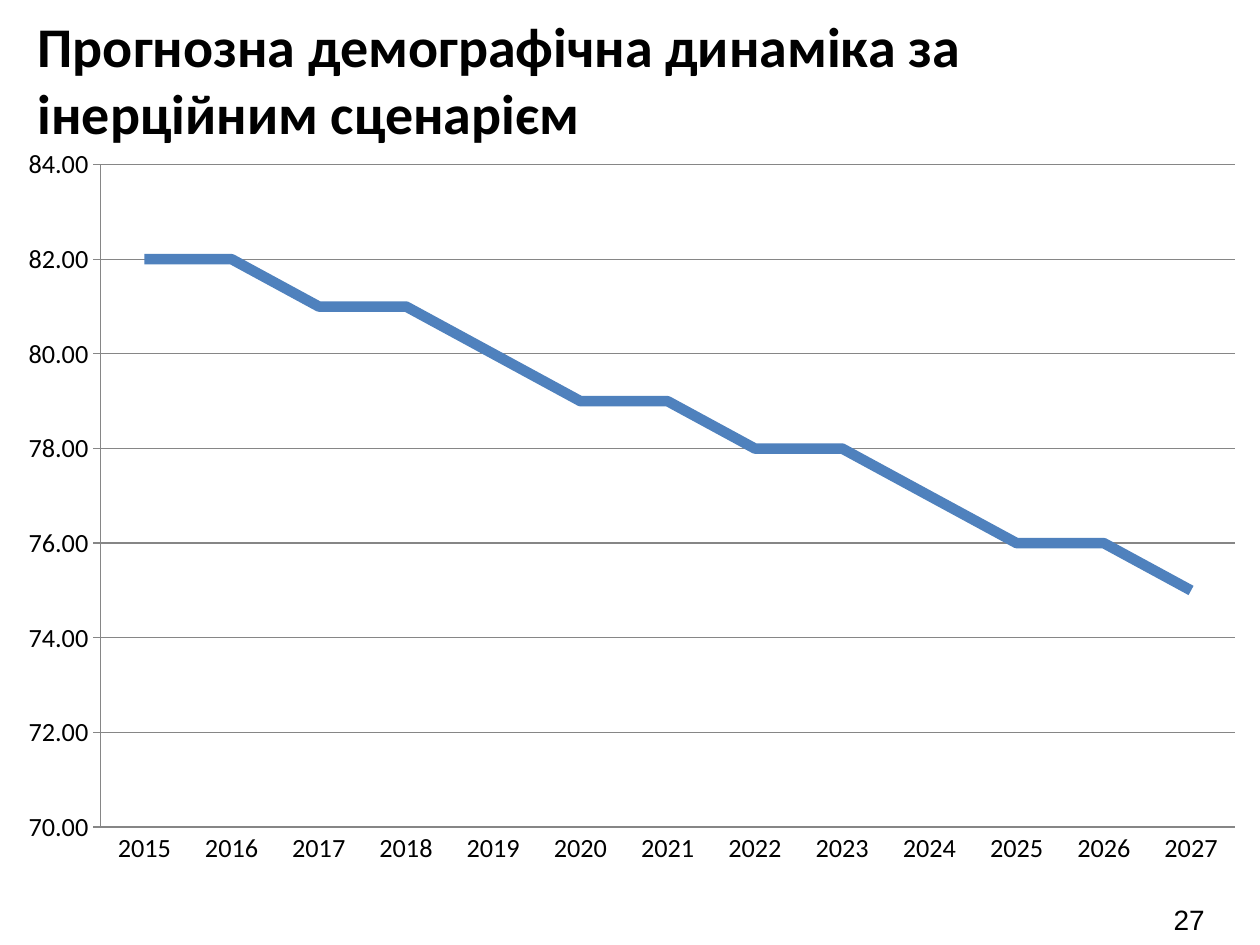
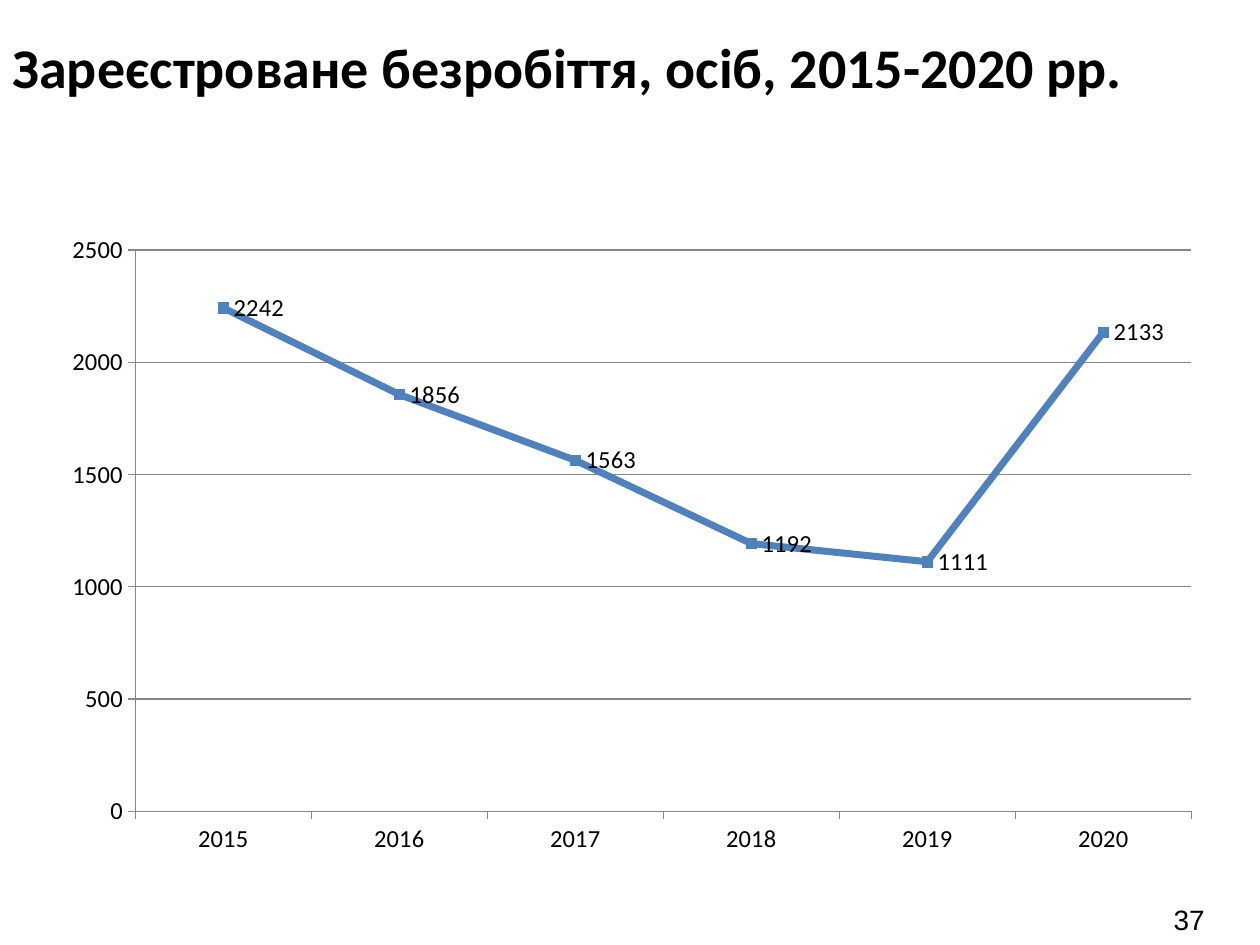
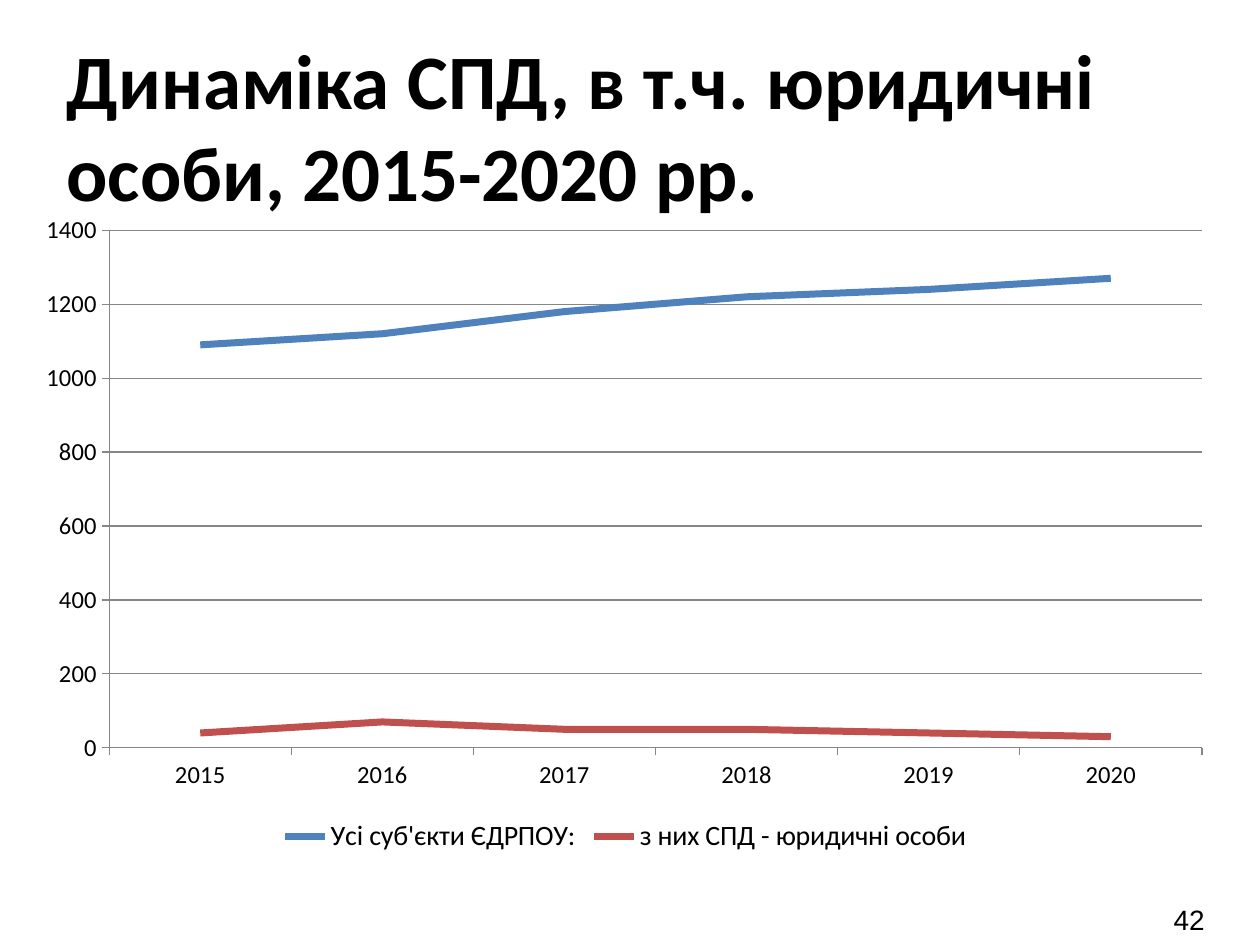
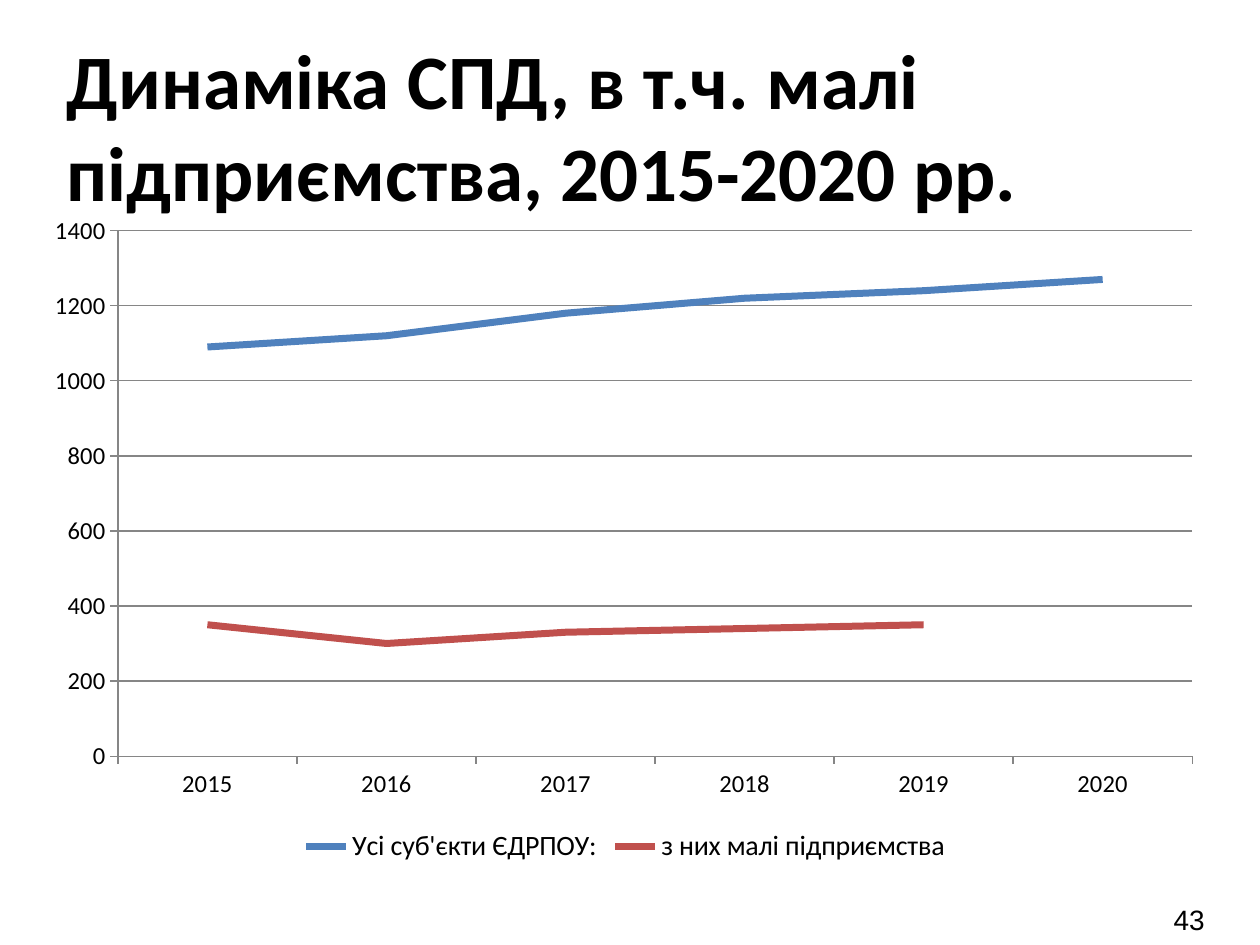
import pptx
import pptx.chart.data
import pptx.dml.color
import pptx.enum.chart
import pptx.enum.text
import pptx.oxml
import pptx.util

COLUMNS, ROWS = 100, 75
CELL = pptx.util.Inches(0.1)
COLORS = {
    "background": "FFFFFF",
    "text": "000000",
    "grid": "868686",
    "primary": "4F81BD",
    "secondary": "C0504D",
}
HEADING_FONT, NUMBER_FONT = "Calibri", "Arial"
NUMBER_BOX = (73.3, 71, 23.3, 4)
PLOT_LEFT, PLOT_TOP, PLOT_WIDTH = 0.07, 0.04, 0.91
YEARS = [str(year) for year in range(2015, 2021)]
FORECAST_YEARS = [str(year) for year in range(2015, 2028)]
ALL_ENTITIES = ("Усі суб'єкти ЄДРПОУ:", (1090, 1120, 1180, 1220, 1240, 1270))


def color(name):
    return pptx.dml.color.RGBColor.from_string(COLORS[name])


def place(box):
    return [round(cells * CELL) for cells in box]


def style_font(font, size, name=HEADING_FONT, bold=False):
    font.size = pptx.util.Pt(size)
    font.name = name
    font.bold = bold
    font.color.rgb = color("text")


def add_text(slide, box, text, size, name=HEADING_FONT, bold=False):
    frame = slide.shapes.add_textbox(*place(box)).text_frame
    frame.word_wrap = True
    paragraph = frame.paragraphs[0]
    paragraph.text = text
    style_font(paragraph.font, size, name, bold)
    return frame


def add_title(slide, box, text, size):
    frame = add_text(slide, box, text, size, bold=True)
    frame.auto_size = pptx.enum.text.MSO_AUTO_SIZE.SHAPE_TO_FIT_TEXT


def add_slide_number(slide, number):
    frame = add_text(slide, NUMBER_BOX, str(number), 16, NUMBER_FONT)
    frame.vertical_anchor = pptx.enum.text.MSO_ANCHOR.MIDDLE
    frame.paragraphs[0].alignment = pptx.enum.text.PP_ALIGN.RIGHT


def add_slide(presentation, number, title, title_box, title_size):
    slide = presentation.slides.add_slide(presentation.slide_layouts[6])
    slide.background.fill.solid()
    slide.background.fill.fore_color.rgb = color("background")
    add_slide_number(slide, number)
    add_title(slide, title_box, title, title_size)
    return slide


def style_line(line, name, width):
    line.color.rgb = color(name)
    line.width = pptx.util.Pt(width)


def set_plot_area(chart, left, width, height):
    plot_area = chart.plots[0]._element.getparent()
    for layout in plot_area.findall(pptx.oxml.ns.qn("c:layout")):
        plot_area.remove(layout)
    shares = {"x": left, "y": PLOT_TOP, "w": width, "h": height}
    modes = "".join(f'<c:{side}Mode val="edge"/>' for side in "xy")
    values = "".join(f'<c:{side} val="{share}"/>' for side, share in shares.items())
    plot_area.insert(0, pptx.oxml.parse_xml(
        f'<c:layout {pptx.oxml.ns.nsdecls("c")}><c:manualLayout>'
        f'<c:layoutTarget val="inner"/>{modes}{values}'
        "</c:manualLayout></c:layout>"))


def style_axes(chart, size, scale, number_format, category_ticks):
    tick = pptx.enum.chart.XL_TICK_MARK
    value_axis, category_axis = chart.value_axis, chart.category_axis
    value_axis.minimum_scale, value_axis.maximum_scale, value_axis.major_unit = scale
    value_axis.has_major_gridlines = True
    style_line(value_axis.major_gridlines.format.line, "grid", 0.75)
    value_axis.tick_labels.number_format = number_format
    value_axis.tick_labels.number_format_is_linked = False
    value_axis.major_tick_mark = tick.OUTSIDE
    category_axis.major_tick_mark = tick.OUTSIDE if category_ticks else tick.NONE
    for axis in (value_axis, category_axis):
        axis.minor_tick_mark = tick.NONE
        style_line(axis.format.line, "grid", 0.75)
        style_font(axis.tick_labels.font, size)


def add_markers(series, name):
    marker = series.marker
    marker.style = pptx.enum.chart.XL_MARKER_STYLE.SQUARE
    marker.size = 6
    marker.format.fill.solid()
    marker.format.fill.fore_color.rgb = color(name)
    style_line(marker.format.line, name, 0.75)


def add_value_labels(series, size):
    labels = series.data_labels
    labels.show_value = True
    labels.position = pptx.enum.chart.XL_LABEL_POSITION.RIGHT
    style_font(labels.font, size)


def add_legend(chart):
    chart.has_legend = True
    chart.legend.position = pptx.enum.chart.XL_LEGEND_POSITION.BOTTOM
    chart.legend.include_in_layout = False
    style_font(chart.legend.font, 16)


def add_line_chart(slide, box, categories, rows, scale, plot_height, size=14,
                   line_width=4, number_format="General", category_ticks=True,
                   labelled=False, plot_left=PLOT_LEFT, plot_width=PLOT_WIDTH):
    data = pptx.chart.data.CategoryChartData()
    data.categories = categories
    for name, values in rows:
        data.add_series(name, values)
    kinds = pptx.enum.chart.XL_CHART_TYPE
    kind = kinds.LINE_MARKERS if labelled else kinds.LINE
    chart = slide.shapes.add_chart(kind, *place(box), data).chart
    chart.has_title = False
    chart.has_legend = False
    style_font(chart.font, size)
    chart.plots[0].vary_by_categories = False
    style_axes(chart, size, scale, number_format, category_ticks)
    set_plot_area(chart, plot_left, plot_width, plot_height)
    for series, name in zip(chart.plots[0].series, ("primary", "secondary")):
        series.smooth = False
        style_line(series.format.line, name, line_width)
        if labelled:
            add_markers(series, name)
            add_value_labels(series, size)
    if len(rows) > 1:
        add_legend(chart)


def add_forecast_slide(presentation):
    slide = add_slide(presentation, 27,
                      "Прогнозна демографічна динаміка за інерційним сценарієм",
                      (2, 0.4, 96.9, 11.8), 32)
    population = (82, 82, 81, 81, 80, 79, 79, 78, 78, 77, 76, 76, 75)
    add_line_chart(slide, (0, 10.7, 100, 59.1), FORECAST_YEARS,
                   [("Series 1", population)], (70, 84, 2), 0.89, size=15,
                   line_width=6, number_format="0.00", category_ticks=False,
                   plot_left=0.08, plot_width=0.9)


def add_unemployment_slide(presentation):
    slide = add_slide(presentation, 37,
                      "Зареєстроване безробіття, осіб, 2015-2020 рр.",
                      (0, 2.1, 92.5, 6.4), 32)
    unemployed = (2242, 1856, 1563, 1192, 1111, 2133)
    add_line_chart(slide, (4.3, 17.8, 92.1, 51.2), YEARS,
                   [("Series 1", unemployed)], (0, 2500, 500), 0.87, labelled=True)


def add_entities_slide(presentation, number, group, chart_box, part):
    slide = add_slide(presentation, number,
                      f"Динаміка СПД, в т.ч. {group}, 2015-2020 рр.",
                      (4.3, 2.1, 85.8, 15.8), 44)
    add_line_chart(slide, chart_box, YEARS, [ALL_ENTITIES, part], (0, 1400, 200), 0.79)


def main():
    presentation = pptx.Presentation()
    presentation.slide_width = COLUMNS * CELL
    presentation.slide_height = ROWS * CELL
    add_forecast_slide(presentation)
    add_unemployment_slide(presentation)
    add_entities_slide(presentation, 42, "юридичні особи", (2, 16.2, 95.3, 52),
                       ("з них СПД - юридичні особи", (40, 70, 50, 50, 40, 30)))
    add_entities_slide(presentation, 43, "малі підприємства", (2.8, 16.2, 93.7, 52.8),
                       ("з них малі підприємства", (350, 300, 330, 340, 350, None)))
    presentation.save("out.pptx")


if __name__ == "__main__":
    main()
